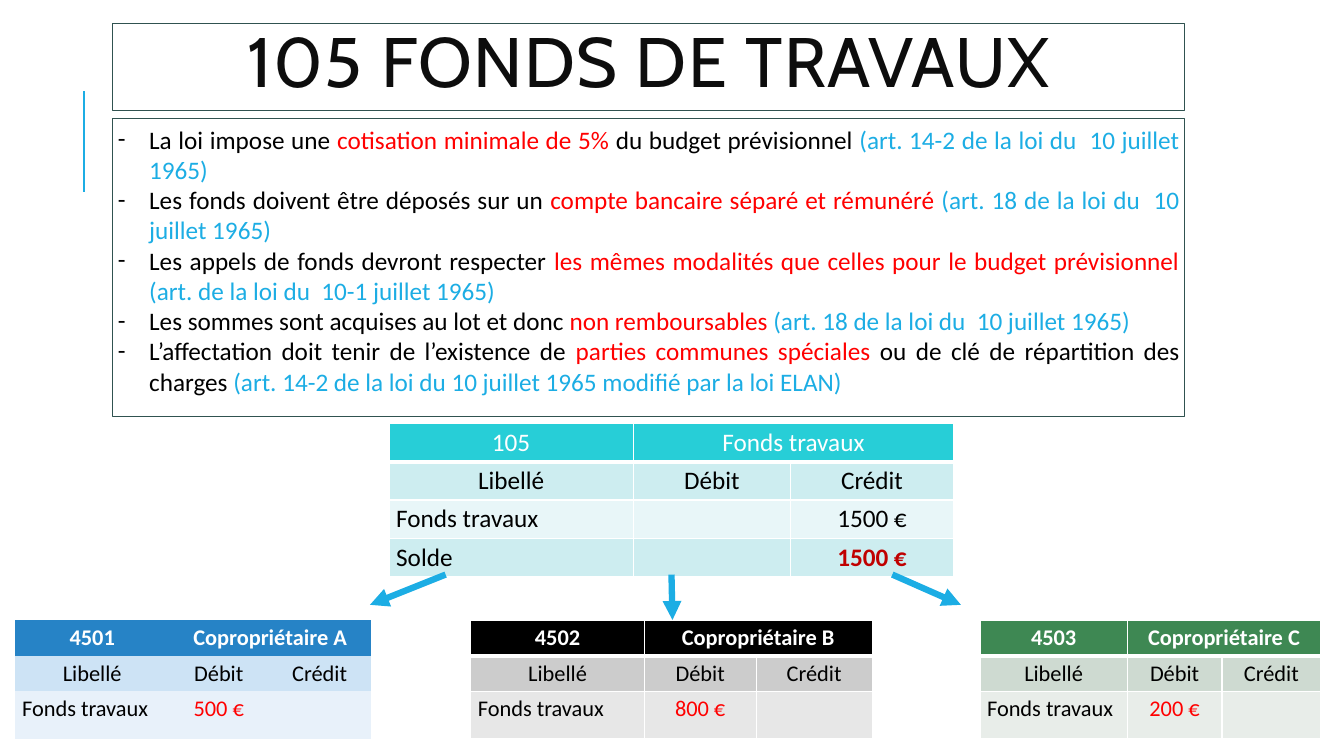
import pptx
import pptx.dml.color
import pptx.enum.shapes
import pptx.enum.text
import pptx.oxml
import pptx.oxml.ns
import pptx.util

Inches, Pt = pptx.util.Inches, pptx.util.Pt
ALIGN, ANCHOR = pptx.enum.text.PP_ALIGN, pptx.enum.text.MSO_ANCHOR
BLACK, WHITE, RED, DARK_RED = "000000", "FFFFFF", "FF0000", "C00000"
BLUE, FRAME = "1CADE4", "305250"
NO_GRID_STYLE = "{2D5ABB26-0587-4C30-8999-92F81FD0307C}"


def rgb(value):
    return pptx.dml.color.RGBColor.from_string(value)


def add_xml(parent, tag, content="", **attrs):
    text = " ".join(f'{name}="{value}"' for name, value in attrs.items())
    ns = pptx.oxml.ns.nsdecls("a")
    child = pptx.oxml.parse_xml(f"<a:{tag} {ns} {text}>{content}</a:{tag}>")
    parent.append(child)
    return child


class Deck:
    """Holds the fonts and the current slide, and draws each kind of element."""

    def __init__(self, slide, title_font, body_font):
        self.slide = slide
        self.title_font = title_font
        self.body_font = body_font

    def set_font(self, font, size, color, bold=False):
        font.name = self.body_font
        font.size = Pt(size)
        font.bold = bold
        font.color.rgb = rgb(color)

    def frame(self, sp):
        sp.line.color.rgb = rgb(FRAME)
        sp.line.width = Pt(0.75)

    def title(self, text, left, top, width, height):
        sp = self.slide.shapes.title
        sp.left, sp.top = Inches(left), Inches(top)
        sp.width, sp.height = Inches(width), Inches(height)
        self.frame(sp)
        tf = sp.text_frame
        tf.text = text
        tf.vertical_anchor = ANCHOR.MIDDLE
        p = tf.paragraphs[0]
        p.alignment = ALIGN.CENTER
        p.line_spacing = 0.8
        p.font.name = self.title_font
        p.font.size = Pt(50)
        p.font.color.rgb = rgb("0D0D0D")
        p.runs[0].font._element.set("spc", "100")

    def bullets(self, items, left, top, width, height):
        sp = self.slide.shapes.add_textbox(
            Inches(left), Inches(top), Inches(width), Inches(height))
        self.frame(sp)
        tf = sp.text_frame
        tf.word_wrap = True
        tf.margin_left = tf.margin_right = Inches(0.05)
        tf.margin_top = tf.margin_bottom = Inches(0.05)
        for i, runs in enumerate(items):
            p = tf.add_paragraph() if i else tf.paragraphs[0]
            p.alignment = ALIGN.JUSTIFY
            pPr = p._p.get_or_add_pPr()
            pPr.set("marL", str(Inches(0.31)))
            pPr.set("indent", str(-Inches(0.31)))
            add_xml(pPr, "buFont", typeface=self.body_font)
            add_xml(pPr, "buChar", char="-")
            for text, color in runs:
                r = p.add_run()
                r.text = text
                self.set_font(r.font, 18, color)

    def borders(self, cell, row):
        tcPr = cell._tc.get_or_add_tcPr()
        fill = f'<a:solidFill><a:srgbClr val="{WHITE}"/></a:solidFill>'
        for side in "LRTB" if row == 0 else "LRB":
            points = 3 if row == 0 and side == "B" else 1
            add_xml(tcPr, f"ln{side}", fill, w=Pt(points))

    def account(self, number, name, entries, left, top, cols, rows, fills,
                size, bold, grid=True):
        data = [(number, name, ""), ("Libellé", "Débit", "Crédit"), *entries]
        table = self.slide.shapes.add_table(
            len(rows), len(cols), Inches(left), Inches(top),
            Inches(sum(cols)), Inches(sum(rows))).table
        table.first_row = table.horz_banding = False
        table._tbl.tblPr.find(pptx.oxml.ns.qn("a:tableStyleId")).text = NO_GRID_STYLE
        for column, width in zip(table.columns, cols):
            column.width = Inches(width)
        for i, (row, height) in enumerate(zip(table.rows, rows)):
            row.height = Inches(height)
            for j, cell in enumerate(row.cells):
                if grid:
                    self.borders(cell, i)
                cell.fill.solid()
                cell.fill.fore_color.rgb = rgb(fills[i])
                cell.margin_left = cell.margin_right = Inches(0.07)
                cell.margin_top = cell.margin_bottom = Inches(0.04)
                cell.text = data[i][j]
                p = cell.text_frame.paragraphs[0]
                p.alignment = ALIGN.LEFT if i > 1 and j == 0 else ALIGN.CENTER
                self.set_font(p.font, size, BLACK if i else WHITE, bold and i == 0)
        table.cell(0, 1).merge(table.cell(0, 2))
        return table

    def highlight(self, cell, size, color, bold=False):
        self.set_font(cell.text_frame.paragraphs[0].font, size, color, bold)

    def line(self, start, end, width, arrow=False):
        points = [Inches(v) for v in (*start, *end)]
        cxn = self.slide.shapes.add_connector(
            pptx.enum.shapes.MSO_CONNECTOR.STRAIGHT, *points)
        cxn.line.color.rgb = rgb(BLUE)
        cxn.line.width = Pt(width)
        if arrow:
            add_xml(cxn.line._get_or_add_ln(), "tailEnd", type="triangle")
        add_xml(cxn._element.spPr, "effectLst")


RULES = [
    [("La loi impose une ", BLACK), ("cotisation minimale de 5% ", RED),
     ("du budget prévisionnel ", BLACK),
     ("(art. 14-2 de la loi du  10 juillet 1965)", BLUE)],
    [("Les fonds doivent être déposés sur un ", BLACK),
     ("compte bancaire séparé et rémunéré ", RED),
     ("(art. 18 de la loi du  10 juillet 1965) ", BLUE)],
    [("Les appels de fonds devront respecter ", BLACK),
     ("les mêmes modalités que celles pour le budget prévisionnel ", RED),
     ("(art. de la loi du  10-1 juillet 1965)", BLUE)],
    [("Les sommes sont acquises au lot et donc ", BLACK),
     ("non remboursables ", RED),
     ("(art. 18 de la loi du  10 juillet 1965)", BLUE)],
    [("L’affectation doit tenir de l’existence de ", BLACK),
     ("parties communes spéciales ", RED),
     ("ou de clé de répartition des charges ", BLACK),
     ("(art. 14-2 de la loi du 10 juillet 1965 modifié par la loi ELAN)", BLUE)],
]
OWNERS = [
    ("4501", "A", "500 €", 0.15, (1.53, 0.98, 1.02), ("2683C6", "CDE3F5", "E8F1FA")),
    ("4502", "B", "800 €", 4.67, (1.72, 1.11, 1.15), ("000000", "CCCCCC", "E7E7E7")),
    ("4503", "C", "200 €", 9.72, (1.46, 0.94, 0.98), ("3E8853", "CEDAD1", "E8EDE9")),
]
ARROWS = [((6.66, 5.7), (6.67, 6.15)), ((8.85, 5.7), (9.53, 6)),
          ((4.42, 5.7), (3.67, 6))]


def main():
    prs = pptx.Presentation()
    prs.slide_width, prs.slide_height = Inches(13.33), Inches(7.5)
    deck = Deck(prs.slides.add_slide(prs.slide_layouts[5]), "Cabin", "Calibri")
    deck.line((0.83, 1.9), (0.83, 0.9), 1.5)
    deck.title("105 FONDS DE TRAVAUX", 1.12, 0.23, 10.63, 0.87)
    deck.bullets(RULES, 1.12, 1.18, 10.63, 2.95)
    fund = deck.account(
        "105", "Fonds travaux",
        [("Fonds travaux", "", "1500 €"), ("Solde", "", "1500 €")],
        3.86, 4.2, (2.42, 1.56, 1.62), [0.38] * 4,
        ("27CED7", "CDEDF0", "E8F6F8", "CDEDF0"), 18, False)
    deck.highlight(fund.cell(3, 2), 18, DARK_RED, True)
    for number, owner, debit, left, cols, fills in OWNERS:
        table = deck.account(
            number, f"Copropriétaire {owner}", [("Fonds travaux", debit, "")],
            left, 6.15, cols, (0.36, 0.35, 0.47), fills, 16, True, owner != "A")
        deck.highlight(table.cell(2, 1), 16, RED)
    for start, end in ARROWS:
        deck.line(start, end, 4.5, arrow=True)
    prs.save("out.pptx")


if __name__ == "__main__":
    main()
